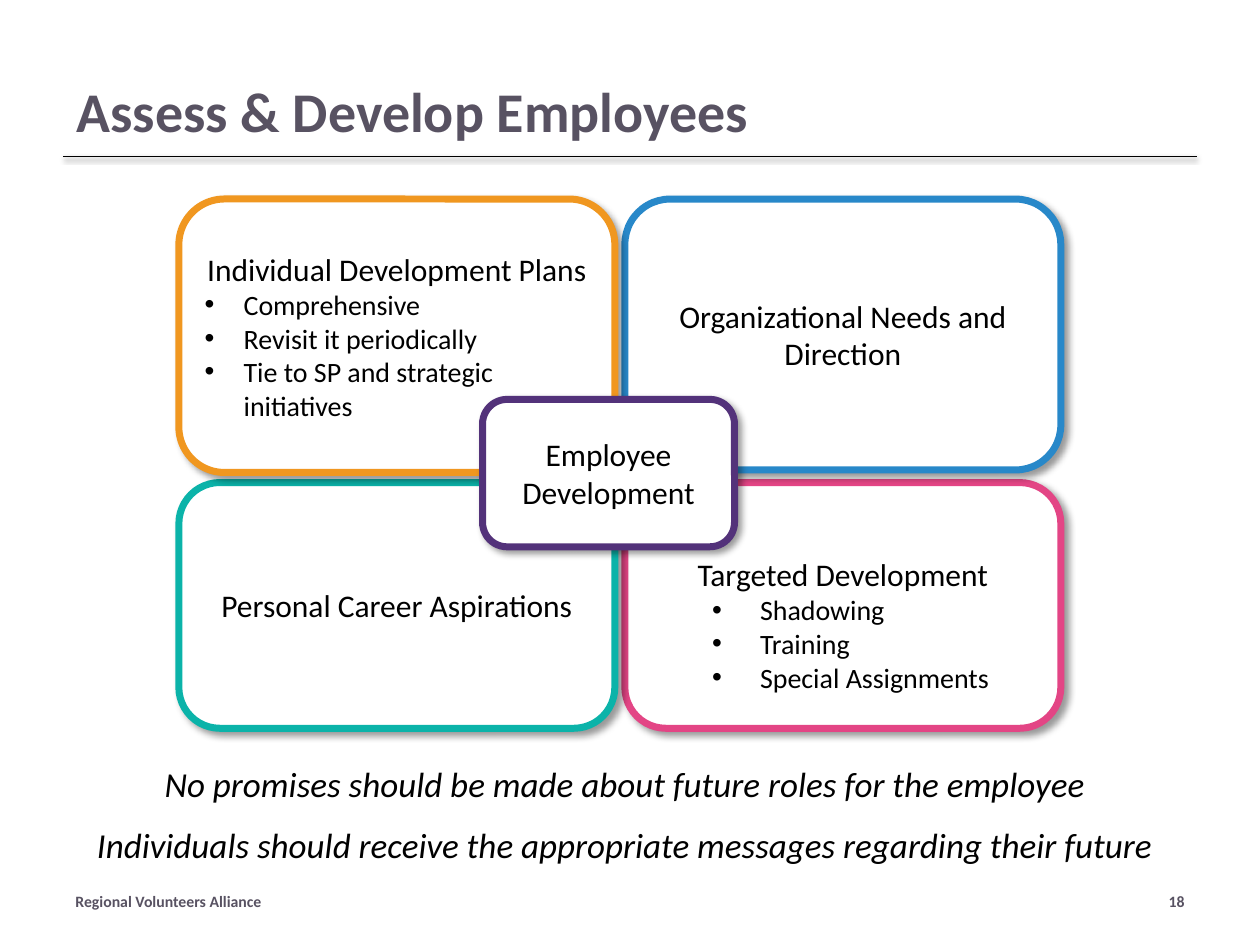
from dataclasses import dataclass

from lxml.etree import SubElement
from pptx import Presentation
from pptx.dml.color import RGBColor
from pptx.enum.shapes import MSO_CONNECTOR, MSO_SHAPE
from pptx.enum.text import MSO_ANCHOR, PP_ALIGN
from pptx.oxml.ns import qn
from pptx.util import Inches, Pt

BLACK, SLATE, WHITE = "000000", "585262", "FFFFFF"
LEFT_COL, RIGHT_COL, CARD_W = 1.42, 4.96, 3.46
TOP_ROW, BOTTOM_ROW, BOTTOM_H = 1.58, 3.83, 1.95


@dataclass
class Card:
    """A rounded box with a heading and optional bullets."""
    heading: str
    color: str
    left: float
    top: float
    width: float
    height: float
    bullets: tuple[str, ...] = ()
    indent: float = 0
    hang: float = 0
    inset_top: float = 0.05


@dataclass
class Label:
    """A text box whose paragraphs share one style."""
    lines: tuple[str, ...]
    left: float
    top: float
    width: float
    height: float
    size: int
    color: str = SLATE
    bold: bool = True
    italic: bool = False
    align: PP_ALIGN = PP_ALIGN.LEFT
    anchor: MSO_ANCHOR = MSO_ANCHOR.MIDDLE
    inset_top: float = 0.05
    indent: float = 0
    line_spacing: float = 1
    gap: float = 0


CARDS = [
    Card("Targeted Development", "E34585", RIGHT_COL, BOTTOM_ROW, CARD_W, BOTTOM_H,
         ("Shadowing", "Training", "Special Assignments"), 0.88, 0.38, 0.35),
    Card("Organizational Needs and Direction", "2888C9", RIGHT_COL, TOP_ROW, CARD_W, 2.15),
    Card("Personal Career Aspirations", "0BB3A9", LEFT_COL, BOTTOM_ROW, CARD_W, BOTTOM_H),
    Card("Individual Development Plans", "F09720", LEFT_COL, TOP_ROW, CARD_W, 2.17,
         ("Comprehensive", "Revisit it periodically",
          "Tie to SP and strategic initiatives"), 0.31, 0.31),
    Card("Employee Development", "53327A", 3.83, 3.17, 2, 1.17),
]

LABELS = [
    Label(("No promises should be made about future roles for the employee",
           "Individuals should receive the appropriate messages regarding their future"),
          0, 6.07, 9.42, 0.99, 20, BLACK, False, True, PP_ALIGN.CENTER, MSO_ANCHOR.TOP,
          indent=0.5, line_spacing=0.8, gap=15.5),
    Label(("Regional Volunteers Alliance",), 0.5, 6.95, 6.08, 0.4, 9),
    Label(("18",), 7.17, 6.95, 2.33, 0.4, 9, align=PP_ALIGN.RIGHT),
    Label(("Assess & Develop Employees",), 0.51, 0.5, 9, 0.49, 32,
          anchor=MSO_ANCHOR.TOP, inset_top=0.11),
]


def rgb(value: str) -> RGBColor:
    """Turn a hex string into a colour."""
    return RGBColor.from_string(value)


def style_runs(p, size: int, color: str, bold: bool = False, italic: bool = False) -> None:
    """Format every run of a paragraph."""
    for r in p.runs:
        r.font.name, r.font.size = "Calibri", Pt(size)
        r.font.bold, r.font.italic = bold, italic
        r.font.color.rgb = rgb(color)


def indent_paragraph(p, left: float, hang: float = 0) -> None:
    """Set the left margin and hanging indent of a paragraph."""
    pPr = p._p.get_or_add_pPr()
    pPr.set("marL", str(Inches(left)))
    pPr.set("indent", str(-Inches(hang)))


def add_bullet(p) -> None:
    """Give a paragraph a round bullet."""
    pPr = p._p.get_or_add_pPr()
    SubElement(pPr, qn("a:buFont"), typeface="Arial")
    SubElement(pPr, qn("a:buChar"), char="•")


def add_shadow(s, alpha: int, blur: float, distance: float, angle: int) -> None:
    """Give a shape or line a soft black outer shadow."""
    effects = SubElement(s._element.spPr, qn("a:effectLst"))
    shadow = SubElement(effects, qn("a:outerShdw"), blurRad=str(Pt(blur)),
                        dist=str(Pt(distance)), dir=str(angle * 60000),
                        algn="tl", rotWithShape="0")
    color = SubElement(shadow, qn("a:srgbClr"), val=BLACK)
    SubElement(color, qn("a:alpha"), val=str(alpha * 1000))


def draw_label(slide, label: Label) -> None:
    """Draw a text box."""
    s = slide.shapes.add_textbox(Inches(label.left), Inches(label.top),
                                 Inches(label.width), Inches(label.height))
    tf = s.text_frame
    tf.word_wrap = True
    tf.vertical_anchor = label.anchor
    tf.margin_top = Inches(label.inset_top)
    tf.text = "\n".join(label.lines)
    for i, p in enumerate(tf.paragraphs):
        p.alignment = label.align
        p.line_spacing = label.line_spacing
        if i:
            p.space_before = Pt(label.gap)
        indent_paragraph(p, label.indent)
        style_runs(p, label.size, label.color, label.bold, label.italic)


def draw_card(slide, card: Card) -> None:
    """Draw a rounded box with its text."""
    s = slide.shapes.add_shape(MSO_SHAPE.ROUNDED_RECTANGLE, Inches(card.left),
                               Inches(card.top), Inches(card.width), Inches(card.height))
    s.fill.solid()
    s.fill.fore_color.rgb = rgb(WHITE)
    s.line.color.rgb = rgb(card.color)
    s.line.width = Pt(4)
    add_shadow(s, 40, 4, 3, 45)
    tf = s.text_frame
    tf.word_wrap = True
    tf.vertical_anchor = MSO_ANCHOR.MIDDLE
    tf.margin_top = Inches(card.inset_top)
    tf.text = "\n".join((card.heading, *card.bullets))
    heading, *bullets = tf.paragraphs
    heading.alignment = PP_ALIGN.CENTER
    style_runs(heading, 18, BLACK)
    for p in bullets:
        p.alignment = PP_ALIGN.LEFT
        indent_paragraph(p, card.indent, card.hang)
        add_bullet(p)
        style_runs(p, 16, BLACK)


def draw_rule(slide, left: float, right: float, y: float) -> None:
    """Draw the line below the title."""
    s = slide.shapes.add_connector(MSO_CONNECTOR.STRAIGHT, Inches(left), Inches(y),
                                   Inches(right), Inches(y))
    s.line.color.rgb = rgb(BLACK)
    s.line.width = Pt(0.5)
    add_shadow(s, 38, 3.1, 1.6, 90)


def main() -> None:
    """Build and save the slide."""
    prs = Presentation()
    prs.slide_width, prs.slide_height = Inches(10), Inches(7.5)
    slide = prs.slides.add_slide(prs.slide_layouts[6])
    for label in LABELS:
        draw_label(slide, label)
    for card in CARDS:
        draw_card(slide, card)
    draw_rule(slide, 0.5, 9.5, 1.24)
    prs.save("out.pptx")


if __name__ == "__main__":
    main()
